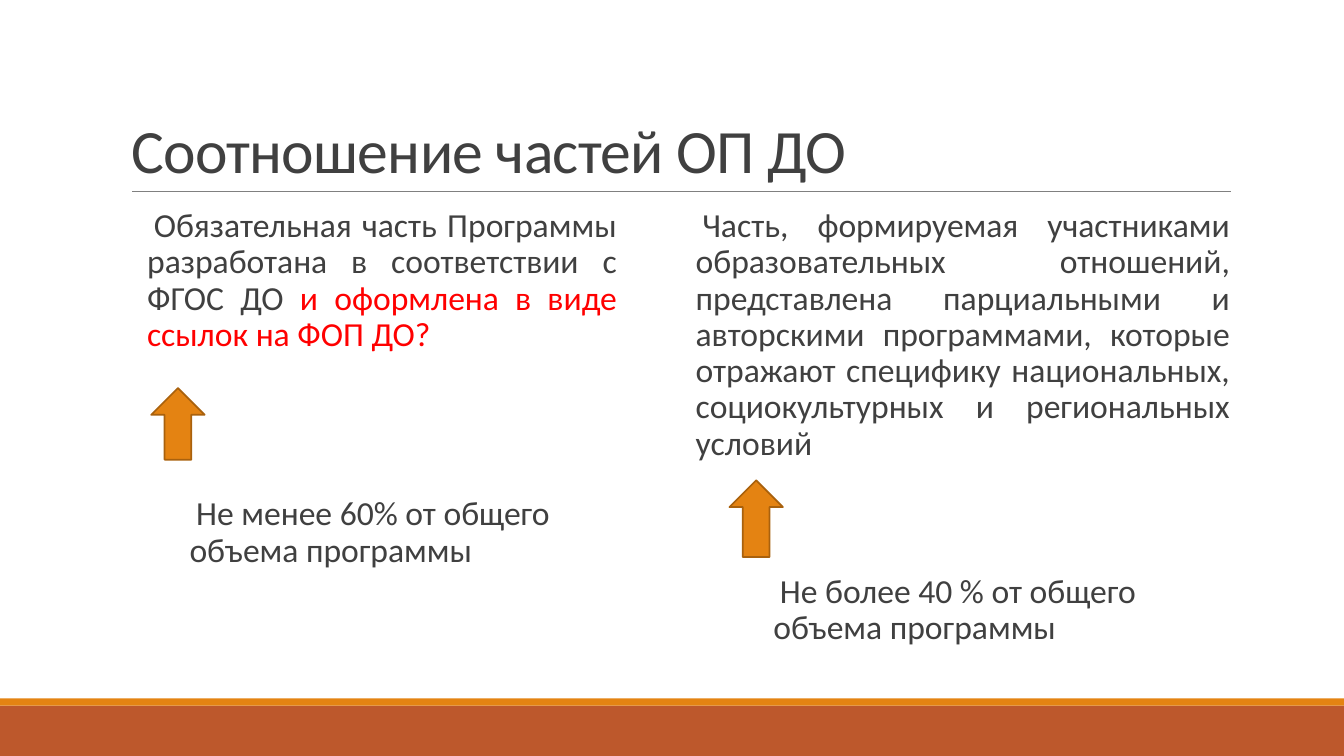
from lxml import etree
from pptx import Presentation
from pptx.dml.color import RGBColor
from pptx.enum.shapes import MSO_CONNECTOR, MSO_SHAPE
from pptx.enum.text import MSO_ANCHOR, MSO_AUTO_SIZE, PP_ALIGN
from pptx.oxml.ns import qn
from pptx.util import Pt

RECT = MSO_SHAPE.RECTANGLE
ARROW = MSO_SHAPE.RIGHT_ARROW
STRAIGHT = MSO_CONNECTOR.STRAIGHT
LEFT, JUSTIFY = PP_ALIGN.LEFT, PP_ALIGN.JUSTIFY

PX = 9144  # 100 px to the inch
FONT = "Calibri"
ORANGE, RUST, TEXT, RED = "E48312", "BD582C", "404040", "FF0000"
RULE, ARROW_EDGE = "808080", "A9610D"


def px(*lengths):
    return [n * PX for n in lengths]


def color(hex_string):
    return RGBColor.from_string(hex_string)


def add_run(p, text, size, fill=TEXT):
    r = p.add_run()
    r.text = text
    r.font.name = FONT
    r.font.size = Pt(size)
    r.font.color.rgb = color(fill)
    return r


def add_block(s, box, shape_type, fill):
    sp = s.shapes.add_shape(shape_type, *px(*box))
    sp.shadow.inherit = False
    sp.fill.solid()
    sp.fill.fore_color.rgb = color(fill)
    sp.line.fill.background()
    return sp


def add_up_arrow(s, box):
    sp = add_block(s, box, ARROW, ORANGE)
    sp.rotation = 270
    sp.line.color.rgb = color(ARROW_EDGE)
    sp.line.width = Pt(1.25)


def add_rule(s, x1, x2, y):
    line = s.shapes.add_connector(STRAIGHT, *px(x1, y, x2, y))
    line.line.color.rgb = color(RULE)
    line.line.width = Pt(0.5)
    etree.SubElement(line._element.spPr, qn("a:effectLst"))


def set_title(s, box, text):
    sp = s.shapes.title
    sp.left, sp.top, sp.width, sp.height = px(*box)
    tf = sp.text_frame
    tf.word_wrap = True
    tf.auto_size = MSO_AUTO_SIZE.NONE
    tf.vertical_anchor = MSO_ANCHOR.BOTTOM
    p = tf.paragraphs[0]
    p.alignment = LEFT
    p.line_spacing = 0.85
    r = add_run(p, text, 44)
    r.font._element.set("spc", "-50")


def add_text(s, box, runs, align=LEFT):
    tf = s.shapes.add_textbox(*px(*box)).text_frame
    tf.word_wrap = True
    tf.margin_left = tf.margin_right = 0
    tf.margin_top, tf.margin_bottom = px(5, 5)
    p = tf.paragraphs[0]
    p.alignment = align
    p.line_spacing = 0.9
    p.space_before, p.space_after = Pt(12), Pt(2)
    # Hanging indent with a blank bullet
    pPr = p._p.get_or_add_pPr()
    pPr.set("marL", str(10 * PX))
    pPr.set("indent", str(-10 * PX))
    clr = etree.SubElement(pPr, qn("a:buClr"))
    etree.SubElement(clr, qn("a:srgbClr"), val=ORANGE)
    etree.SubElement(pPr, qn("a:buChar"), char=" ")
    for text, fill in runs:
        add_run(p, text, 24, fill)


def main():
    prs = Presentation()
    prs.slide_width, prs.slide_height = px(1333, 750)
    s = prs.slides.add_slide(prs.slide_layouts[5])

    # Footer bands, title and its rule
    add_block(s, (0, 700, 1333, 50), RECT, RUST)
    add_block(s, (0, 693, 1333, 7), RECT, ORANGE)
    add_rule(s, 131, 1221, 190)
    set_title(s, (120, 31, 1100, 159), "Соотношение частей ОП ДО")

    # Mandatory part
    add_text(s, (136, 202, 476, 183), [
        ("Обязательная часть Программы разработана в соответствии с ФГОС ДО ", TEXT),
        ("и оформлена в виде ссылок на ФОП ДО?", RED),
    ], JUSTIFY)
    add_up_arrow(s, (141, 394, 71, 53))
    add_text(s, (178, 488, 417, 95),
             [("Не менее 60% от общего объема программы", TEXT)])

    # Part formed by the participants
    add_text(s, (680, 202, 540, 263), [
        ("Часть, формируемая участниками образовательных отношений, "
         "представлена парциальными и авторскими программами, которые "
         "отражают специфику национальных, социокультурных и "
         "региональных условий", TEXT),
    ], JUSTIFY)
    add_up_arrow(s, (712, 488, 76, 53))
    add_text(s, (757, 565, 417, 94),
             [("Не более 40 % от общего объема программы", TEXT)])

    prs.save("out.pptx")


if __name__ == "__main__":
    main()
